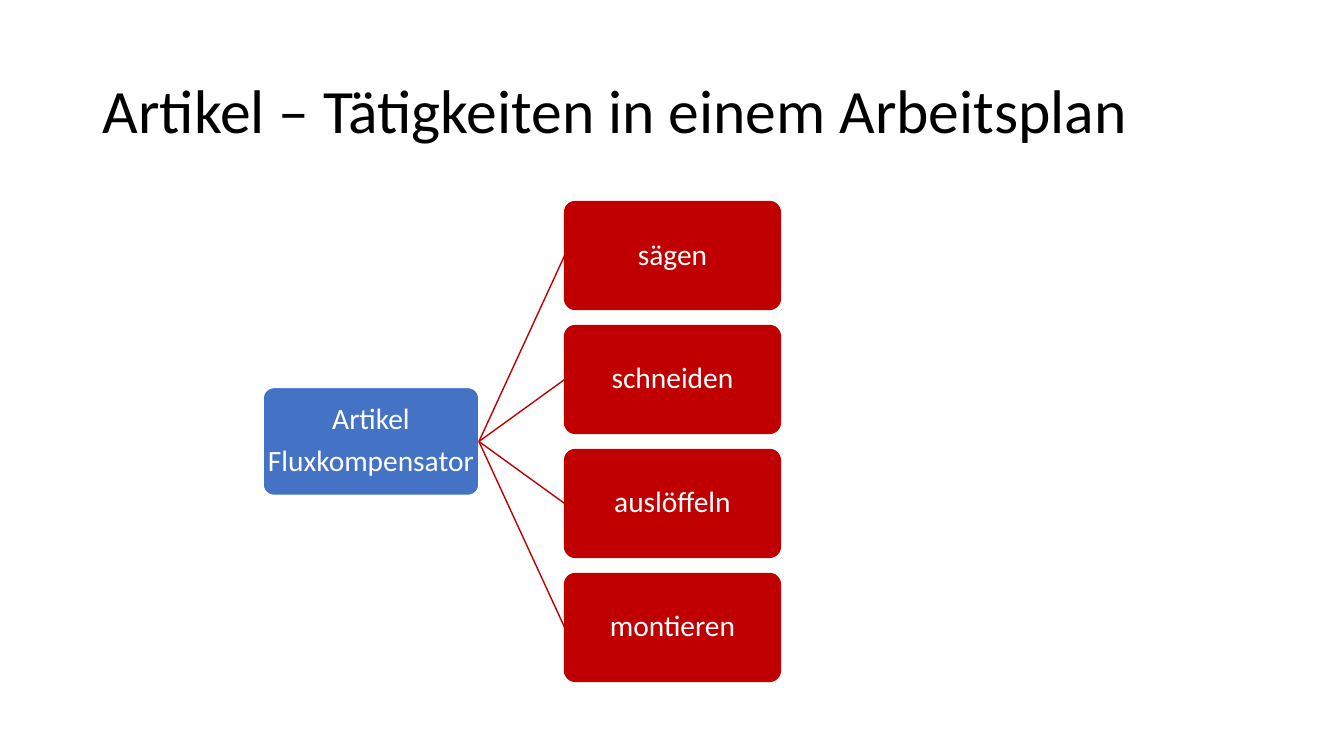
from pptx import Presentation
from pptx.dml.color import RGBColor
from pptx.enum.shapes import MSO_CONNECTOR, MSO_SHAPE
from pptx.enum.text import MSO_ANCHOR, PP_ALIGN
from pptx.oxml.ns import qn
from pptx.util import Inches, Pt
from lxml.etree import SubElement

TITLE = "Artikel – Tätigkeiten in einem Arbeitsplan"
ROOT = ["Artikel", "Fluxkompensator"]
STEPS = ["sägen", "schneiden", "auslöffeln", "montieren"]

FONT = "Calibri"
BLACK = RGBColor(0x00, 0x00, 0x00)
WHITE = RGBColor(0xFF, 0xFF, 0xFF)
BLUE = RGBColor(0x44, 0x72, 0xC4)
RED = RGBColor(0xC0, 0x00, 0x00)

WIDTH, HEIGHT = 2.14, 1.07
ROOT_X, STEP_X = 2.61, 5.6
TOP, PITCH = 2.0, 1.23


def write(frame, lines, size, color, align, gap=0):
    frame.word_wrap = True
    frame.vertical_anchor = MSO_ANCHOR.MIDDLE
    for i, line in enumerate(lines):
        para = frame.add_paragraph() if i else frame.paragraphs[0]
        para.alignment = align
        para.line_spacing = 0.9
        para.space_after = Pt(gap)
        run = para.add_run()
        run.text = line
        run.font.name = FONT
        run.font.size = Pt(size)
        run.font.color.rgb = color


def add_box(slide, x, y, lines, fill, edge):
    box = slide.shapes.add_shape(
        MSO_SHAPE.ROUNDED_RECTANGLE,
        Inches(x), Inches(y), Inches(WIDTH), Inches(HEIGHT))
    box.adjustments[0] = 0.1
    box.shadow.inherit = False
    box.fill.solid()
    box.fill.fore_color.rgb = fill
    box.line.color.rgb = edge
    box.line.width = Pt(1)
    frame = box.text_frame
    frame.margin_left = frame.margin_right = Inches(0.01)
    frame.margin_top = frame.margin_bottom = Inches(0.01)
    write(frame, lines, 21, WHITE, PP_ALIGN.CENTER, 7.35)
    return box


def link(slide, start, end):
    line = slide.shapes.add_connector(MSO_CONNECTOR.STRAIGHT, 0, 0, 0, 0)
    line.begin_connect(start, 3)
    line.end_connect(end, 1)
    line.line.color.rgb = RED
    line.line.width = Pt(1)
    SubElement(line._element.spPr, qn("a:effectLst"))


def main():
    deck = Presentation()
    deck.slide_width, deck.slide_height = Inches(13.33), Inches(7.5)
    slide = deck.slides.add_slide(deck.slide_layouts[6])

    title = slide.shapes.add_textbox(
        Inches(0.92), Inches(0.4), Inches(11.5), Inches(1.45))
    write(title.text_frame, [TITLE], 44, BLACK, PP_ALIGN.LEFT)

    mid = TOP + PITCH * (len(STEPS) - 1) / 2
    root = add_box(slide, ROOT_X, mid, ROOT, BLUE, WHITE)
    for i, step in enumerate(STEPS):
        box = add_box(slide, STEP_X, TOP + i * PITCH, [step], RED, RED)
        link(slide, root, box)

    deck.save("out.pptx")


if __name__ == "__main__":
    main()
